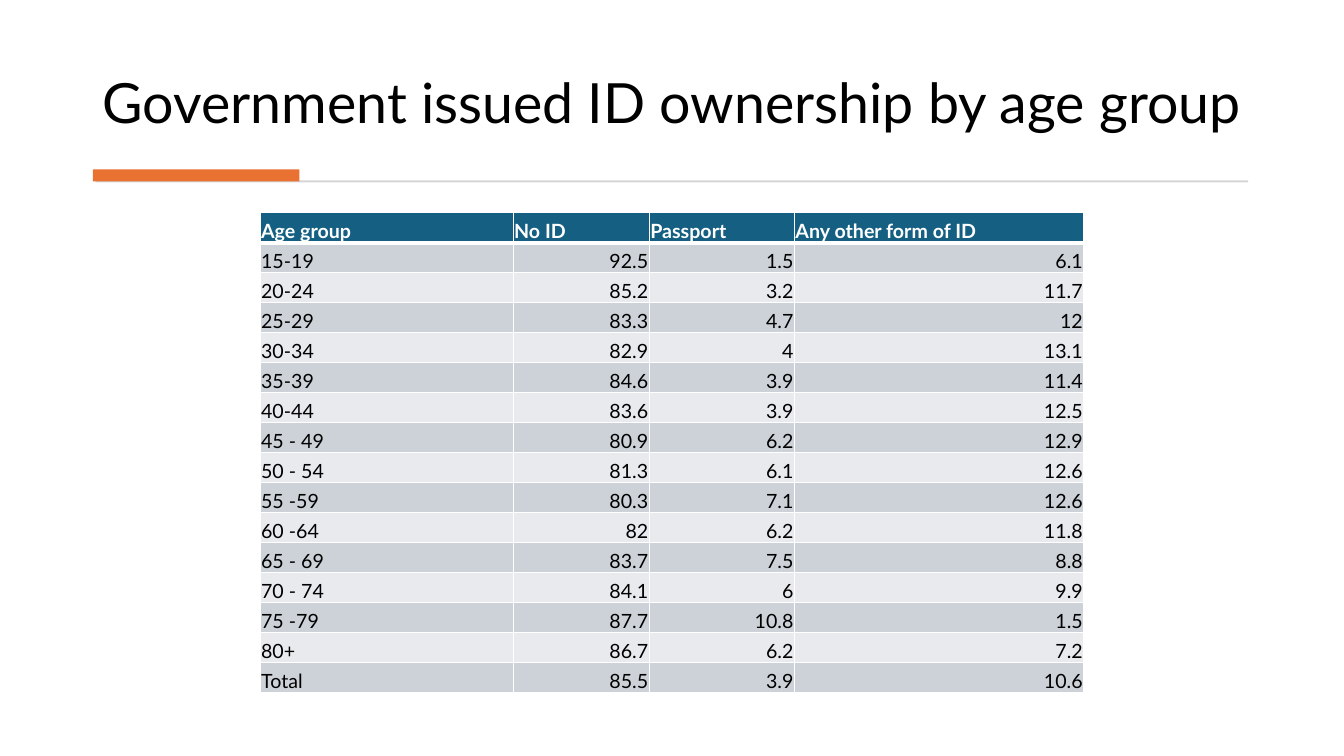
from lxml.etree import SubElement
from pptx import Presentation
from pptx.dml.color import RGBColor
from pptx.enum.shapes import MSO_SHAPE
from pptx.enum.text import MSO_ANCHOR, PP_ALIGN
from pptx.oxml.ns import qn
from pptx.util import Inches, Pt

BLACK = RGBColor(0x00, 0x00, 0x00)
WHITE = RGBColor(0xFF, 0xFF, 0xFF)
GREY = RGBColor(0xD5, 0xD5, 0xD5)
ORANGE = RGBColor(0xE9, 0x71, 0x32)
TEAL = RGBColor(0x15, 0x60, 0x82)
BAND_DARK = RGBColor(0xCC, 0xD2, 0xD8)
BAND_LIGHT = RGBColor(0xE8, 0xEA, 0xED)

COLUMN_WIDTHS = [2.51, 1.35, 1.44, 2.87]
ROW_HEIGHT = 0.298
ID_OWNERSHIP = [
    ("Age group", "No ID", "Passport", "Any other form of ID"),
    ("15-19", "92.5", "1.5", "6.1"),
    ("20-24", "85.2", "3.2", "11.7"),
    ("25-29", "83.3", "4.7", "12"),
    ("30-34", "82.9", "4", "13.1"),
    ("35-39", "84.6", "3.9", "11.4"),
    ("40-44", "83.6", "3.9", "12.5"),
    ("45 - 49", "80.9", "6.2", "12.9"),
    ("50 - 54", "81.3", "6.1", "12.6"),
    ("55 -59", "80.3", "7.1", "12.6"),
    ("60 -64", "82", "6.2", "11.8"),
    ("65 - 69", "83.7", "7.5", "8.8"),
    ("70 - 74", "84.1", "6", "9.9"),
    ("75 -79", "87.7", "10.8", "1.5"),
    ("80+", "86.7", "6.2", "7.2"),
    ("Total", "85.5", "3.9", "10.6"),
]


class SlideBuilder:
    """Hold the text style and the current slide, and add elements to it."""

    def __init__(self, slide, font="Lato"):
        self.slide = slide
        self.font = font

    def style(self, p, size, color, bold=False):
        p.font.name = self.font
        p.font.size = Pt(size)
        p.font.bold = bold
        p.font.color.rgb = color

    def title(self, text, left, top, width, height):
        box = self.slide.shapes.add_textbox(
            Inches(left), Inches(top), Inches(width), Inches(height))
        tf = box.text_frame
        tf.word_wrap = True
        tf.margin_right = 0
        tf.vertical_anchor = MSO_ANCHOR.BOTTOM
        p = tf.paragraphs[0]
        p.text = text
        p.line_spacing = 0.9
        self.style(p, 39.6, BLACK)

    def bar(self, color, left, top, width, height):
        sp = self.slide.shapes.add_shape(
            MSO_SHAPE.RECTANGLE,
            Inches(left), Inches(top), Inches(width), Inches(height))
        sp.shadow.inherit = False
        sp.fill.solid()
        sp.fill.fore_color.rgb = color
        sp.line.fill.background()

    def borders(self, cell, top=1, bottom=1):
        tc_pr = cell._tc.get_or_add_tcPr()
        for side, width in (("L", 1), ("R", 1), ("T", top), ("B", bottom)):
            ln = SubElement(tc_pr, qn(f"a:ln{side}"), w=str(Pt(width)))
            fill = SubElement(ln, qn("a:solidFill"))
            SubElement(fill, qn("a:srgbClr"), val=str(WHITE))

    def cell(self, cell, text, row, col):
        header = row == 0
        self.borders(cell, top=3 if row == 1 else 1, bottom=3 if header else 1)
        cell.fill.solid()
        cell.fill.fore_color.rgb = (
            TEAL if header else BAND_DARK if row % 2 else BAND_LIGHT)
        cell.margin_left = cell.margin_right = cell.margin_top = Inches(0.01)
        cell.margin_bottom = 0
        cell.vertical_anchor = MSO_ANCHOR.BOTTOM
        p = cell.text_frame.paragraphs[0]
        p.text = text
        p.alignment = PP_ALIGN.LEFT if header or col == 0 else PP_ALIGN.RIGHT
        self.style(p, 14, WHITE if header else BLACK, header)

    def table(self, rows, widths, row_height, left, top):
        table = self.slide.shapes.add_table(
            len(rows), len(widths), Inches(left), Inches(top),
            Inches(sum(widths)), Inches(row_height * len(rows))).table
        for column, width in zip(table.columns, widths):
            column.width = Inches(width)
        for row, values in enumerate(rows):
            table.rows[row].height = Inches(row_height)
            for col, text in enumerate(values):
                self.cell(table.cell(row, col), text, row, col)


def main():
    prs = Presentation()
    prs.slide_width = Inches(13.33)
    prs.slide_height = Inches(7.5)
    s = SlideBuilder(prs.slides.add_slide(prs.slide_layouts[6]))
    s.title("Government issued ID ownership by age group", 0.92, 0.28, 11.49, 1.11)
    s.bar(GREY, 0.95, 1.79, 11.43, 0.02)
    s.bar(ORANGE, 0.92, 1.68, 2.05, 0.12)
    s.table(ID_OWNERSHIP, COLUMN_WIDTHS, ROW_HEIGHT, 2.58, 2.11)
    prs.save("out.pptx")


if __name__ == "__main__":
    main()
